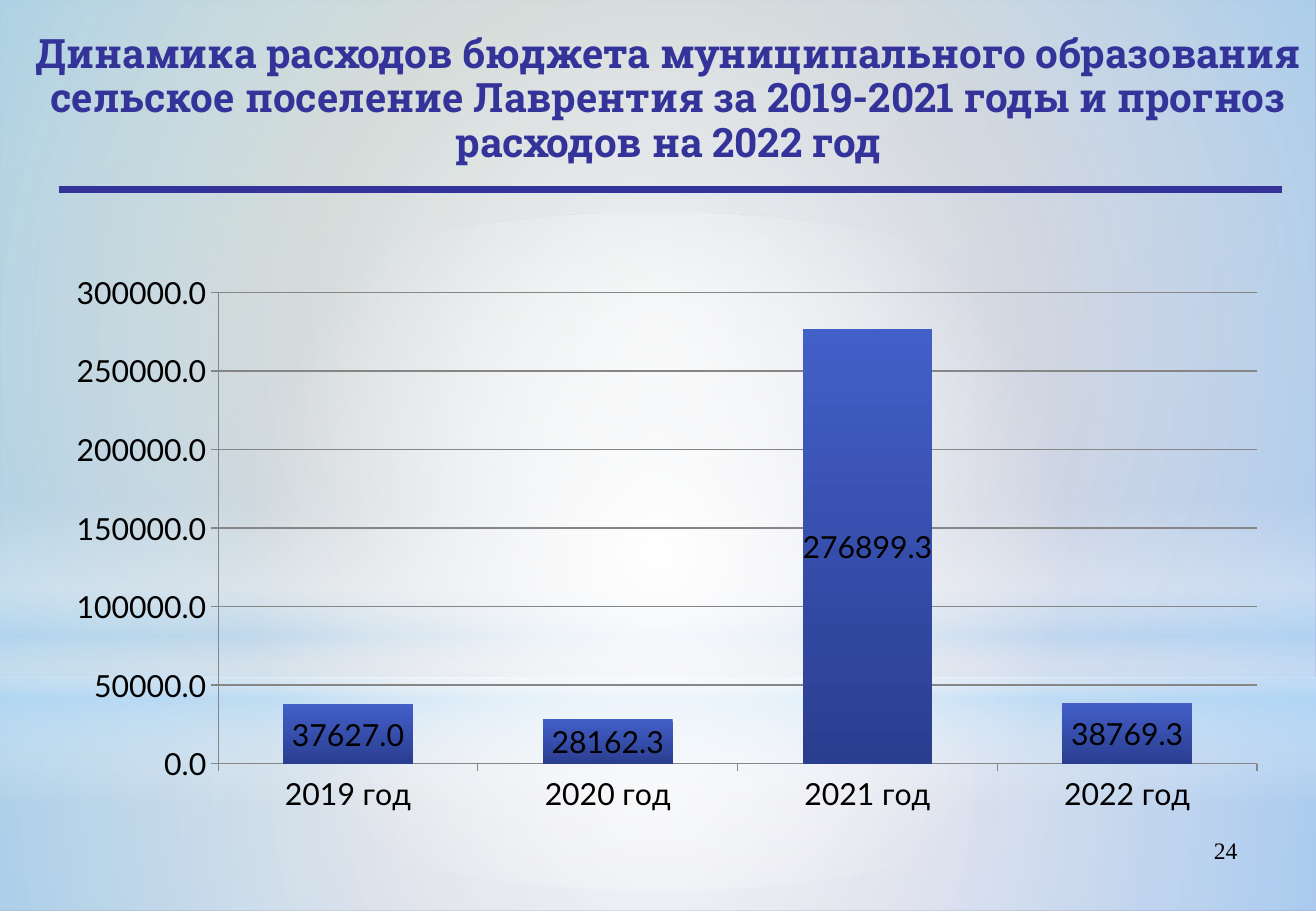
from lxml import etree
from pptx import Presentation
from pptx.chart.data import CategoryChartData
from pptx.dml.color import RGBColor
from pptx.enum.chart import XL_CHART_TYPE as ChartType, XL_LABEL_POSITION as LabelPos
from pptx.enum.chart import XL_TICK_MARK as Tick
from pptx.enum.shapes import MSO_CONNECTOR as Connector, MSO_SHAPE as Shape
from pptx.enum.text import MSO_ANCHOR as Anchor, MSO_AUTO_SIZE as AutoSize, PP_ALIGN as Align
from pptx.oxml import parse_xml
from pptx.oxml.ns import nsdecls, qn
from pptx.util import Cm, Pt

TITLE = ("Динамика расходов бюджета муниципального образования сельское поселение "
         "Лаврентия за 2019-2021 годы и прогноз расходов на 2022 год")
PAGE = "24"
EXPENSES = {"2019 год": 37627, "2020 год": 28162.3, "2021 год": 276899.3, "2022 год": 38769.3}

NAVY = RGBColor(0x33, 0x33, 0x99)
BLACK = RGBColor(0, 0, 0)
GRAY = RGBColor(0x86, 0x86, 0x86)
SAGE = RGBColor(0x96, 0xAB, 0x94)
LILAC = RGBColor(0x84, 0x88, 0xC4)
BAR_TOP = RGBColor(0x43, 0x5F, 0xC8)
BAR_BOTTOM = RGBColor(0x2A, 0x3E, 0x90)
WHITE = RGBColor(0xFF, 0xFF, 0xFF)
SKY = RGBColor(0xB4, 0xDC, 0xFA)

WIDTH, HEIGHT = 27.53, 19.05
HORIZON = 14.17
RADIAL = ('<a:path path="circle"><a:fillToRect l="50000" t="50000" r="50000" b="50000"/></a:path>')
VERTICAL = '<a:lin ang="5400000" scaled="0"/>'
GLOWS = [
    (Shape.RECTANGLE, HORIZON, HEIGHT - HORIZON, RADIAL,
     [(0, WHITE, 91), (37, WHITE, 76), (100, SKY, 79)]),
    (Shape.RECTANGLE, 0, HORIZON, RADIAL,
     [(0, WHITE, 89), (48, WHITE, 62), (100, SKY, 79)]),
    (Shape.RECTANGLE, 10.46, 6.35, VERTICAL,
     [(0, WHITE, 0), (29, WHITE, 30), (45, SKY, 40), (55, WHITE, 26), (65, SKY, 60), (100, WHITE, 0)]),
    (Shape.OVAL, 4.45, HORIZON, RADIAL, [(0, WHITE, 100), (56, WHITE, 0)]),
]
PLOT = {"x": 0.116, "y": 0.092, "w": 0.884, "h": 0.746}


def blend(fill, start, end, angle):
    """Fill with a linear two-colour gradient."""
    fill.gradient()
    fill.gradient_angle = angle
    for stop, color in zip(fill.gradient_stops, (start, end)):
        stop.color.rgb = color


def add_glow(s, kind, top, height, direction, stops):
    """Add a full-width translucent gradient layer."""
    sp = s.shapes.add_shape(kind, 0, Cm(top), Cm(WIDTH), Cm(height))
    sp.shadow.inherit = False
    sp.line.fill.background()
    sp.fill.gradient()
    old = sp.element.find(".//" + qn("a:gradFill"))
    marks = "".join(
        f'<a:gs pos="{pos * 1000}"><a:srgbClr val="{color}"><a:alpha val="{alpha * 1000}"/></a:srgbClr></a:gs>'
        for pos, color, alpha in stops)
    new = parse_xml(f'<a:gradFill {nsdecls("a")} rotWithShape="1"><a:gsLst>{marks}</a:gsLst>{direction}</a:gradFill>')
    old.getparent().replace(old, new)


def write(tf, text, size, font, color, align):
    """Put one formatted paragraph into a text frame."""
    tf.word_wrap = True
    tf.text = text
    p = tf.paragraphs[0]
    p.alignment = align
    r = p.runs[0]
    r.font.size, r.font.name = Pt(size), font
    r.font.color.rgb = color
    return p


def add_title(s):
    """Place the heading and the rule below it."""
    title = s.shapes.title
    title.element.getparent().append(title.element)
    title.left, title.top, title.width, title.height = Cm(0.46), Cm(0.33), Cm(27.05), Cm(3.5)
    tf = title.text_frame
    tf.auto_size = AutoSize.NONE
    tf.vertical_anchor = Anchor.MIDDLE
    tf.margin_left = tf.margin_right = tf.margin_top = tf.margin_bottom = 0
    p = write(tf, TITLE, 24, "Roboto Slab", NAVY, Align.CENTER)
    p.line_spacing = 0.92
    p.runs[0].font.bold = True
    rule = s.shapes.add_connector(Connector.STRAIGHT, Cm(1.24), Cm(3.96), Cm(26.82), Cm(3.96))
    rule.line.color.rgb = NAVY
    rule.line.width = Pt(3.75)
    etree.SubElement(rule.element.spPr, qn("a:effectLst"))


def add_expense_chart(s):
    """Add the column chart of yearly expenses."""
    data = CategoryChartData(number_format="0.0")
    data.categories = list(EXPENSES)
    data.add_series("Series 1", list(EXPENSES.values()))
    chart = s.shapes.add_chart(ChartType.COLUMN_STACKED, Cm(1.6), Cm(4.9), Cm(24.71), Cm(13.21), data).chart
    chart.has_legend = chart.has_title = False
    chart.font.size, chart.font.name = Pt(18), "Lato"
    chart.font.color.rgb = BLACK

    plot = chart.plots[0]
    plot.vary_by_categories = False
    plot.gap_width, plot.overlap = 100, 100
    blend(plot.series[0].format.fill, BAR_TOP, BAR_BOTTOM, 270)
    plot.has_data_labels = True
    labels = plot.data_labels
    labels.show_value = True
    labels.position = LabelPos.CENTER
    labels.number_format, labels.number_format_is_linked = "0.0", False

    values = chart.value_axis
    values.minimum_scale, values.maximum_scale, values.major_unit = 0, 300000, 50000
    values.tick_labels.number_format = "0.0"
    values.tick_labels.number_format_is_linked = False
    values.has_major_gridlines = True
    for axis in (values, chart.category_axis):
        axis.major_tick_mark, axis.minor_tick_mark = Tick.OUTSIDE, Tick.NONE
    for part in (values, values.major_gridlines, chart.category_axis):
        part.format.line.color.rgb = GRAY
        part.format.line.width = Pt(0.75)

    area = chart.element.find(".//" + qn("c:plotArea"))
    for old in area.findall(qn("c:layout")):
        area.remove(old)
    modes = "".join(f'<c:{k}Mode val="edge"/>' for k in "xy")
    sizes = "".join(f'<c:{k} val="{v}"/>' for k, v in PLOT.items())
    area.insert(0, parse_xml(
        f'<c:layout {nsdecls("c")}><c:manualLayout><c:layoutTarget val="inner"/>'
        f'{modes}{sizes}</c:manualLayout></c:layout>'))


def main():
    """Build the budget expenses slide."""
    prs = Presentation()
    prs.slide_width, prs.slide_height = Cm(WIDTH), Cm(HEIGHT)
    s = prs.slides.add_slide(prs.slide_layouts[5])
    blend(s.background.fill, SAGE, LILAC, 315)
    for glow in GLOWS:
        add_glow(s, *glow)
    page = s.shapes.add_textbox(Cm(19.71), Cm(17.35), Cm(6.43), Cm(1.32))
    write(page.text_frame, PAGE, 14, "Times New Roman", BLACK, Align.RIGHT)
    add_title(s)
    add_expense_chart(s)
    prs.save("out.pptx")


if __name__ == "__main__":
    main()
